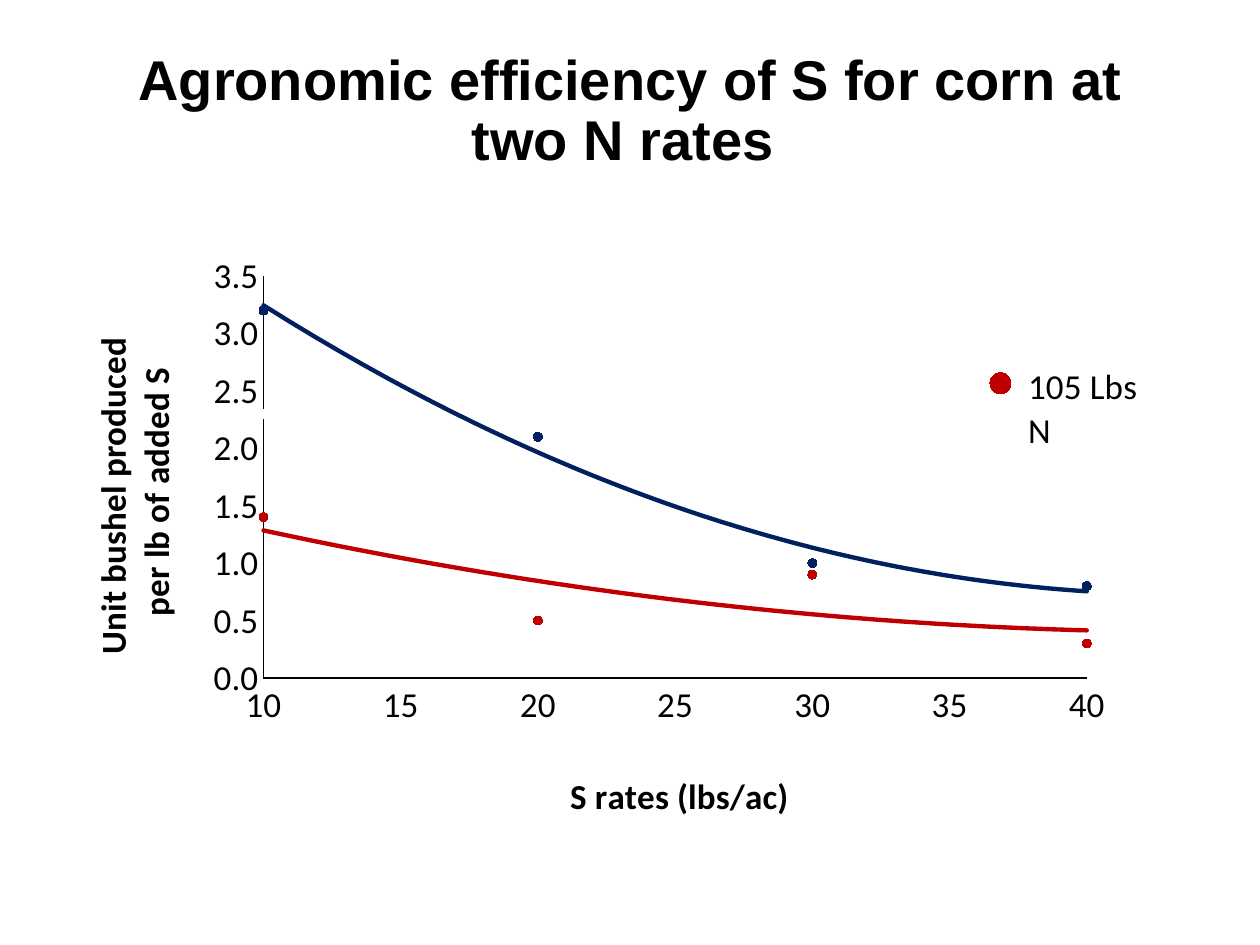
import pptx
import pptx.chart.data
import pptx.dml.color
import pptx.enum.chart
import pptx.enum.text
import pptx.oxml
import pptx.oxml.ns
import pptx.util
from dataclasses import dataclass

Pt = pptx.util.Pt
RGB = pptx.dml.color.RGBColor.from_string
XL = pptx.enum.chart
qn = pptx.oxml.ns.qn


@dataclass(frozen=True)
class Theme:
    ink: str = "000000"
    paper: str = "FFFFFF"
    red: str = "C00000"
    navy: str = "002060"
    title_font: str = "Arial"
    chart_font: str = "Calibri"
    title_size: int = 32
    chart_size: int = 20


T = Theme()
RATES = (10, 20, 30, 40)
# name, yields per lb of S, colour, has a trend curve
SERIES = (
    ("105 Lbs N", (1.4, 0.5, 0.9, 0.3), T.red, True),
    ("210 Lbs N", (3.2, 2.1, 1.0, 0.8), T.navy, True),
    ("Series 3", (2.3, 1.3, 0.7, 0.5), T.paper, False),
)


def set_attrs(obj, **values):
    for name, value in values.items():
        setattr(obj, name, value)


def set_font(font, name, size, bold):
    set_attrs(font, name=name, size=Pt(size), bold=bold)
    font.color.rgb = RGB(T.ink)


def chart_xml(body):
    """Parse a fragment, declaring its namespaces on the first tag."""
    ns = pptx.oxml.ns.nsdecls("c", "a")
    name, rest = body.split(" ", 1) if " " in body.split(">", 1)[0] else body.split(">", 1)
    gap = " " if " " in body.split(">", 1)[0] else ">"
    return pptx.oxml.parse_xml(f"{name} {ns}{gap}{rest}")


def layout(inner=False, **box):
    """Manual layout, as fractions of the chart area."""
    target = '<c:layoutTarget val="inner"/>' if inner else ""
    modes = "".join(f'<c:{k}Mode val="edge"/>' for k in "xy")
    sizes = "".join(f'<c:{k} val="{v}"/>' for k, v in box.items())
    return chart_xml(f"<c:layout><c:manualLayout>{target}{modes}{sizes}"
                     "</c:manualLayout></c:layout>")


def replace_layout(parent, new, after=None):
    for old in parent.findall(qn("c:layout")):
        parent.remove(old)
    if after is None:
        parent.insert(0, new)
    else:
        after.addnext(new)


def add_title(s, text):
    sp = s.shapes.title
    set_attrs(sp, left=Pt(42.5), top=Pt(27.4), width=Pt(635.8), height=Pt(73.4))
    tf = sp.text_frame
    set_attrs(tf, vertical_anchor=pptx.enum.text.MSO_ANCHOR.MIDDLE, word_wrap=True)
    p = tf.paragraphs[0]
    set_attrs(p, alignment=pptx.enum.text.PP_ALIGN.CENTER, line_spacing=0.9)
    r = p.add_run()
    r.text = text
    set_font(r.font, T.title_font, T.title_size, True)


def format_axis(axis, title, x, y, **scale):
    set_attrs(axis, has_major_gridlines=False, has_minor_gridlines=False,
              major_tick_mark=XL.XL_TICK_MARK.NONE,
              minor_tick_mark=XL.XL_TICK_MARK.NONE, **scale)
    axis.format.line.color.rgb = RGB(T.ink)
    axis.format.line.width = Pt(0.75)
    set_font(axis.tick_labels.font, T.chart_font, T.chart_size, False)
    tf = axis.axis_title.text_frame
    tf.text = title
    for p in tf.paragraphs:
        for r in p.runs:
            set_font(r.font, T.chart_font, T.chart_size, True)
    element = axis.axis_title._element
    replace_layout(element, layout(x=x, y=y), element.find(qn("c:tx")))
    return tf


def format_series(series, color, trend):
    series.format.line.fill.background()
    set_attrs(series.marker, style=XL.XL_MARKER_STYLE.CIRCLE, size=5)
    fmt = series.marker.format
    fmt.fill.solid()
    fmt.fill.fore_color.rgb = RGB(color)
    fmt.line.color.rgb = RGB(color)
    if trend:
        series._element.find(qn("c:xVal")).addprevious(chart_xml(
            f'<c:trendline><c:spPr><a:ln w="{Pt(2.5)}" cap="rnd"><a:solidFill>'
            f'<a:srgbClr val="{color}"/></a:solidFill></a:ln></c:spPr>'
            '<c:trendlineType val="poly"/><c:order val="2"/>'
            '<c:dispRSqr val="0"/><c:dispEq val="0"/></c:trendline>'))


def format_legend(chart):
    chart.has_legend = True
    legend = chart.legend
    set_attrs(legend, position=XL.XL_LEGEND_POSITION.RIGHT, include_in_layout=False)
    set_font(legend.font, T.chart_font, T.chart_size, False)
    place = legend._element.find(qn("c:legendPos"))
    replace_layout(legend._element, layout(x=0.81, y=0.24, w=0.15, h=0.15), place)
    # Only the first series is listed; trend curves count as entries 3 and 4
    for i in (4, 3, 2, 1):
        place.addnext(chart_xml(f'<c:legendEntry><c:idx val="{i}"/>'
                                '<c:delete val="1"/></c:legendEntry>'))


def add_efficiency_chart(s):
    data = pptx.chart.data.XyChartData(number_format="0.0")
    for name, yields, _, _ in SERIES:
        points = data.add_series(name)
        for rate, value in zip(RATES, yields):
            points.add_data_point(rate, value)
    chart = s.shapes.add_chart(XL.XL_CHART_TYPE.XY_SCATTER, Pt(42.5), Pt(122.4),
                               Pt(635.8), Pt(353.5), data).chart
    chart.has_title = False
    set_font(chart.font, T.chart_font, T.chart_size, False)
    for series, (_, _, color, trend) in zip(chart.plots[0].series, SERIES):
        format_series(series, color, trend)

    # Axes
    format_axis(chart.category_axis, "S rates (lbs/ac)", 0.44, 0.89,
                minimum_scale=10, maximum_scale=40, major_unit=5)
    tf = format_axis(chart.value_axis, "Unit bushel produced \nper lb of added S",
                     0.01, 0.18, minimum_scale=0, maximum_scale=3.5, major_unit=0.5)
    body = tf._txBody.find(qn("a:bodyPr"))
    body.set("rot", "-5400000")
    body.set("vert", "horz")
    for axis, code in ((chart.category_axis, "0"), (chart.value_axis, "0.0")):
        set_attrs(axis.tick_labels, number_format=code, number_format_is_linked=False)

    # Plot area and legend
    plot_area = chart._chartSpace.chart.plotArea
    replace_layout(plot_area, layout(inner=True, x=0.17, y=0.1, w=0.74, h=0.65))
    format_legend(chart)


def main():
    prs = pptx.Presentation()
    set_attrs(prs, slide_width=Pt(720), slide_height=Pt(540))
    s = prs.slides.add_slide(prs.slide_layouts[5])
    add_title(s, "Agronomic efficiency of S for corn at two N rates ")
    add_efficiency_chart(s)
    prs.save("out.pptx")


if __name__ == "__main__":
    main()
